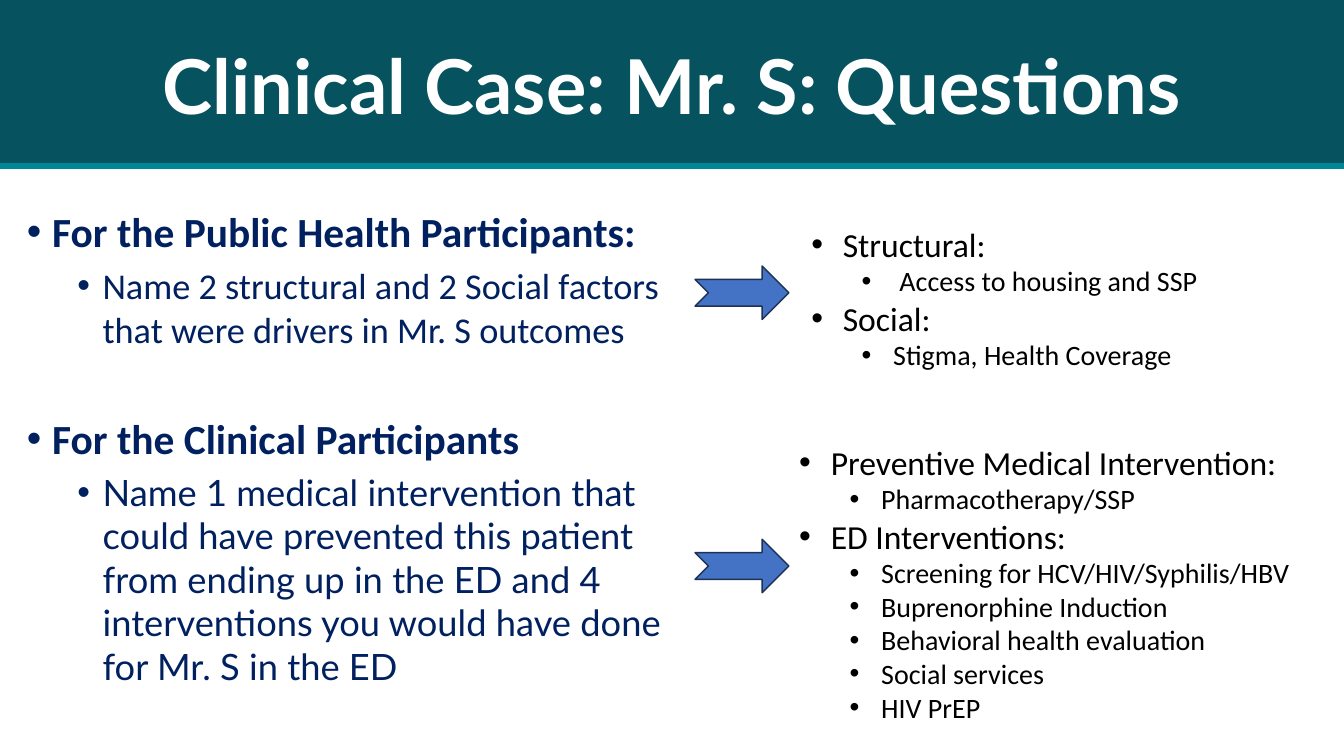
"""Build the clinical case slide: questions on the left, answers on the right."""
from lxml import etree
from pptx import Presentation
from pptx.dml.color import RGBColor
from pptx.enum.shapes import MSO_SHAPE
from pptx.enum.text import MSO_ANCHOR, PP_ALIGN
from pptx.oxml.ns import qn
from pptx.util import Pt

COLORS = {
    "band": "06525E", "strip": "008797", "title": "FFFFFF", "question": "002060",
    "answer": "000000", "arrow": "4472C4", "arrow_edge": "1E3256",
}


def add_block(kind, left, top, width, height, fill, edge):
    block = slide.shapes.add_shape(kind, Pt(left), Pt(top), Pt(width), Pt(height))
    block.shadow.inherit = False
    block.fill.solid()
    block.fill.fore_color.rgb = RGBColor.from_string(COLORS[fill])
    block.line.color.rgb = RGBColor.from_string(COLORS[edge])
    block.line.width = Pt(1)
    return block


def add_bullets(left, top, width, height, items, color, hanging):
    """Each item is (level, text, size, font name, bold, space before)."""
    box = slide.shapes.add_textbox(Pt(left), Pt(top), Pt(width), Pt(height))
    frame = box.text_frame
    frame.word_wrap = True
    for index, (level, text, size, face, bold, gap) in enumerate(items):
        paragraph = frame.paragraphs[0] if index == 0 else frame.add_paragraph()
        paragraph.text = text
        paragraph.level = level
        paragraph.space_before = Pt(gap)
        paragraph.font.size = Pt(size)
        paragraph.font.name = face
        paragraph.font.bold = bold
        paragraph.font.color.rgb = RGBColor.from_string(COLORS[color])
        properties = paragraph._p.get_or_add_pPr()
        properties.set("marL", str(Pt(hanging + 36 * level)))
        properties.set("indent", str(Pt(-hanging)))
        bullet_font = etree.Element(qn("a:buFont"), typeface="Arial")
        bullet = etree.Element(qn("a:buChar"), char="•")
        defaults = properties.find(qn("a:defRPr"))
        defaults.addprevious(bullet_font)
        defaults.addprevious(bullet)


prs = Presentation()
prs.slide_width, prs.slide_height = Pt(960), Pt(540)
slide = prs.slides.add_slide(prs.slide_layouts[6])

band = add_block(MSO_SHAPE.RECTANGLE, 0, 0, 960, 120, "band", "band")
band.text_frame.vertical_anchor = MSO_ANCHOR.MIDDLE
title = band.text_frame.paragraphs[0]
title.text = "Clinical Case: Mr. S: Questions"
title.alignment = PP_ALIGN.CENTER
title.font.size = Pt(54)
title.font.name = "Lato"
title.font.bold = True
title.font.color.rgb = RGBColor.from_string(COLORS["title"])
add_block(MSO_SHAPE.RECTANGLE, 0, 116.6, 960, 3.6, "strip", "strip")

questions = [
    (0, "For the Public Health Participants:", 29.6, "Calibri", True, 10),
    (1, "Name 2 structural and 2 Social factors that were drivers in Mr. S outcomes",
     25.9, "Calibri", False, 5),
    (0, "For the Clinical Participants", 29.6, "Calibri", True, 45),
    (1, "Name 1 medical intervention that could have prevented this patient from ending up "
     "in the ED and 4 interventions you would have done for Mr. S in the ED",
     25.9, "Lato", False, 5),
]
add_bullets(12.2, 144, 467.3, 365.8, questions, "question", 18)

public_health = [
    (0, "Structural:"),
    (1, " Access to housing and SSP"),
    (0, "Social:"),
    (1, "Stigma, Health Coverage"),
]
clinical = [
    (0, "Preventive Medical Intervention:"),
    (1, "Pharmacotherapy/SSP"),
    (0, "ED Interventions:"),
    (1, "Screening for HCV/HIV/Syphilis/HBV"),
    (1, "Buprenorphine Induction"),
    (1, "Behavioral health evaluation"),
    (1, "Social services"),
    (1, "HIV PrEP"),
]
for left, top, height, answers, arrow_top in (
    (572.4, 156.2, 113.8, public_health, 190),
    (563.8, 311.8, 232.6, clinical, 385.2),
):
    items = [(level, text, 20 if level else 24, "Calibri", False, 0) for level, text in answers]
    add_bullets(left, top, 375, height, items, "answer", 22.5)
    add_block(MSO_SHAPE.NOTCHED_RIGHT_ARROW, 496.5, arrow_top, 67, 38.2, "arrow", "arrow_edge")

prs.save("out.pptx")
